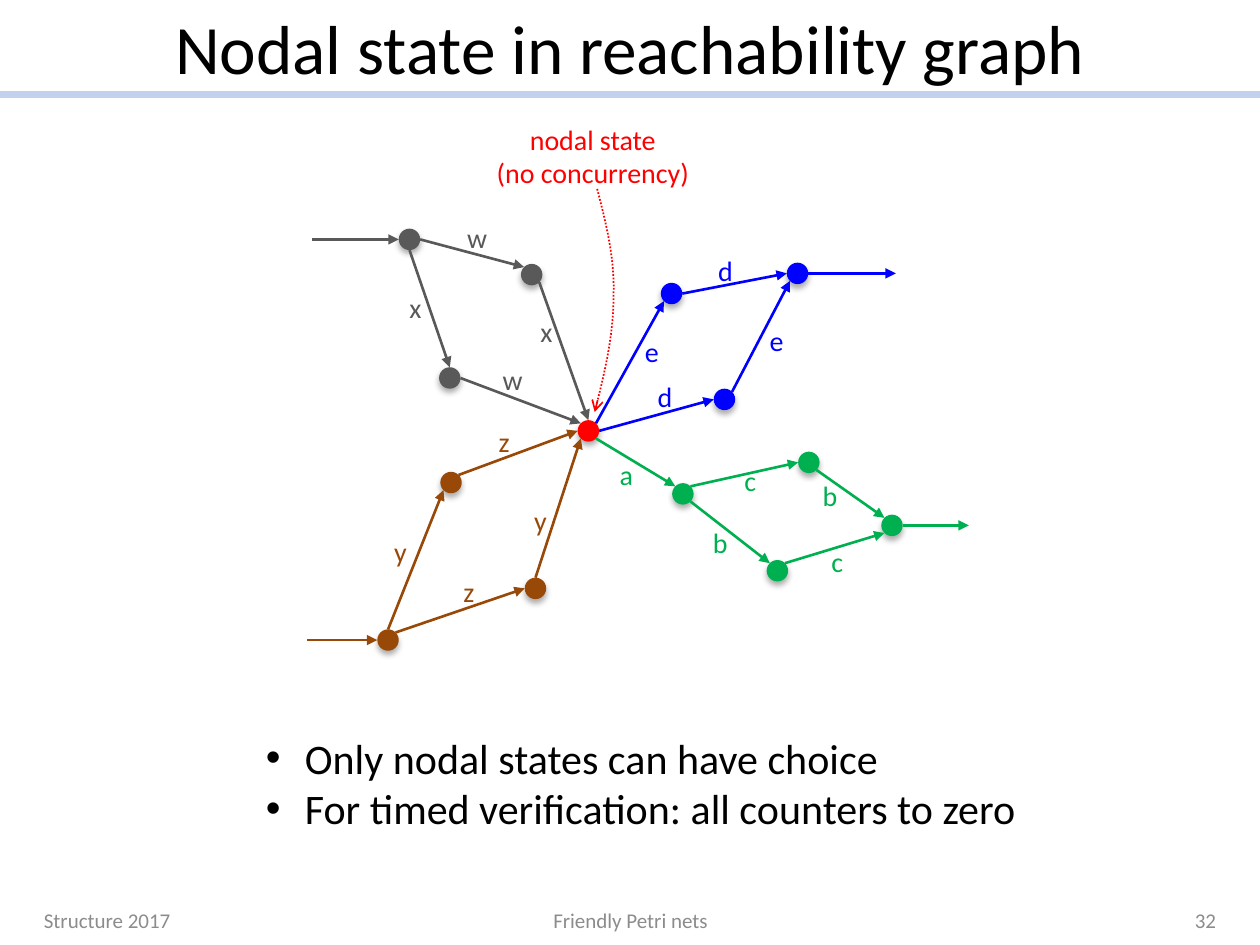
import math
from dataclasses import dataclass

import pptx
import pptx.dml.color
import pptx.enum.dml
import pptx.enum.shapes
import pptx.enum.text
import pptx.oxml
import pptx.oxml.ns
import pptx.util

Inches = pptx.util.Inches
Pt = pptx.util.Pt
RGB = pptx.dml.color.RGBColor.from_string
ALIGN = pptx.enum.text.PP_ALIGN
ANCHOR = pptx.enum.text.MSO_ANCHOR
AUTO_SIZE = pptx.enum.text.MSO_AUTO_SIZE
qn = pptx.oxml.ns.qn


@dataclass(frozen=True)
class Theme:
    font: str = "Calibri"
    black: str = "000000"
    rule: str = "C2D1ED"
    footer: str = "8C8C8C"
    red: str = "FF0000"
    brown: str = "984807"
    grey: str = "595959"
    blue: str = "0000FF"
    green: str = "00B050"
    title_size: float = 39.6
    list_size: float = 24
    label_size: float = 16
    footer_size: float = 12


THEME = Theme()
NODE_SIZE = 0.17
LABEL_WIDTHS = {"w": 0.36, "x": 0.3, "y": 0.3, "z": 0.29, "a": 0.31,
                "b": 0.32, "c": 0.3, "d": 0.32, "e": 0.31}
SIDES = {"right": 0, "bottom right": 45, "bottom": 90, "bottom left": 135,
         "left": 180, "top left": 225, "top": 270, "top right": 315}

NODES = {
    "hub": (4.67, 3.42, THEME.red),
    "brown in": (3.08, 5.08, THEME.brown),
    "brown z": (4.25, 4.67, THEME.brown),
    "brown y": (3.58, 3.83, THEME.brown),
    "grey in": (3.25, 1.9, THEME.grey),
    "grey w": (4.22, 2.18, THEME.grey),
    "grey x": (3.57, 3, THEME.grey),
    "blue e": (5.33, 2.33, THEME.blue),
    "blue d": (5.75, 3.17, THEME.blue),
    "blue out": (6.33, 2.17, THEME.blue),
    "green a": (5.42, 3.92, THEME.green),
    "green b": (6.17, 4.53, THEME.green),
    "green c": (6.42, 3.67, THEME.green),
    "green out": (7.08, 4.17, THEME.green),
}

EDGES = [
    ("brown y", "top right", "hub", "left", "z", 3.86, 3.32),
    ("brown z", "top", "hub", "bottom left", "y", 4.14, 3.95),
    ("brown in", "top", "brown y", "bottom left", "y", 3.03, 4.19),
    ("brown in", "top right", "brown z", "left", "z", 3.58, 4.51),
    ("grey in", "right", "grey w", "top left", "w", 3.61, 1.7),
    ("grey w", "bottom right", "hub", "top", "x", 4.19, 2.45),
    ("grey in", "bottom", "grey x", "top", "x", 3.15, 2.26),
    ("grey x", "right", "hub", "top left", "w", 3.89, 2.83),
    ("blue e", "right", "blue out", "left", "d", 5.6, 1.96),
    ("blue d", "top right", "blue out", "bottom left", "e", 6.01, 2.52),
    ("hub", "right", "blue d", "left", "d", 5.12, 2.96),
    ("hub", "top right", "blue e", "bottom left", "e", 5.02, 2.61),
    ("hub", "bottom right", "green a", "top left", "a", 4.82, 3.58),
    ("green a", "top right", "green c", "left", "c", 5.81, 3.63),
    ("green b", "top right", "green out", "bottom left", "c", 6.5, 4.27),
    ("green a", "bottom right", "green b", "top left", "b", 5.56, 4.12),
    ("green c", "bottom right", "green out", "top left", "b", 6.43, 3.75),
]

ENTRIES = [("grey in", 2.48), ("brown in", 2.44)]
EXITS = [("blue out", 7.11), ("green out", 7.69)]
POINTER = [(4.74, 1.5), (4.81, 1.77), (4.88, 2.05), (4.87, 2.34),
           (4.87, 2.64), (4.8, 2.96), (4.72, 3.27)]
FOOTERS = [("Structure 2017", 0.25, 2.33, ALIGN.LEFT),
           ("Friendly Petri nets", 3.42, 3.17, ALIGN.CENTER),
           ("32", 7.42, 2.33, ALIGN.RIGHT)]


def add_xml(parent, tag, **attrs):
    child = pptx.oxml.parse_xml(
        f'<a:{tag} xmlns:a="http://schemas.openxmlformats.org/drawingml/2006/main"/>')
    for name, value in attrs.items():
        child.set(name, str(value))
    parent.append(child)
    return child


def place(sp, left, top, width, height):
    sp.left, sp.top = Inches(left), Inches(top)
    sp.width, sp.height = Inches(width), Inches(height)


def format_text(tf, size, color, align):
    for p in tf.paragraphs:
        p.alignment = align
        for r in p.runs:
            r.font.name, r.font.size = THEME.font, Pt(size)
            r.font.color.rgb = RGB(color)


def add_text(s, text, box, size, color, align=ALIGN.LEFT, fit=True):
    tf = s.shapes.add_textbox(*map(Inches, box)).text_frame
    tf.text = text
    tf.word_wrap = not fit
    tf.auto_size = AUTO_SIZE.SHAPE_TO_FIT_TEXT if fit else AUTO_SIZE.NONE
    tf.vertical_anchor = ANCHOR.TOP if fit else ANCHOR.MIDDLE
    format_text(tf, size, color, align)


def add_line(s, start, end, color, width=1.5, arrow=True):
    sp = s.shapes.add_connector(pptx.enum.shapes.MSO_CONNECTOR.STRAIGHT,
                                *map(Inches, (*start, *end)))
    sp.line.color.rgb, sp.line.width = RGB(color), Pt(width)
    if arrow:
        add_xml(sp.line._get_or_add_ln(), "tailEnd", type="triangle")
    add_xml(sp._element.spPr, "effectLst")


def add_node(s, x, y, color):
    half = NODE_SIZE / 2
    sp = s.shapes.add_shape(pptx.enum.shapes.MSO_SHAPE.OVAL,
                            *map(Inches, (x - half, y - half, NODE_SIZE, NODE_SIZE)))
    sp.fill.solid()
    sp.fill.fore_color.rgb = RGB(color)
    sp.line.fill.background()
    sp.shadow.inherit = False
    effects = sp._element.spPr.find(qn("a:effectLst"))
    shadow = add_xml(effects, "outerShdw", blurRad=Pt(3.5), dist=Pt(2.2),
                     dir=90 * 60000, rotWithShape=0)
    add_xml(add_xml(shadow, "srgbClr", val=THEME.black), "alpha", val=32000)


def node_side(node, side):
    x, y, _ = NODES[node]
    angle = math.radians(SIDES[side])
    return (x + NODE_SIZE / 2 * math.cos(angle), y + NODE_SIZE / 2 * math.sin(angle))


def add_curve(s, points, color):
    start, *rest = [(Inches(x), Inches(y)) for x, y in points]
    builder = s.shapes.build_freeform(*start)
    builder.add_line_segments(rest, close=False)
    sp = builder.convert_to_shape()
    sp.fill.background()
    sp.line.color.rgb, sp.line.width = RGB(color), Pt(1)
    sp.line.dash_style = pptx.enum.dml.MSO_LINE.ROUND_DOT
    add_xml(sp.line._get_or_add_ln(), "tailEnd", type="arrow")
    sp.shadow.inherit = False
    segments = list(sp._element.iter(qn("a:lnTo")))
    outline = segments[0].getparent()
    for i in range(0, len(segments), 3):
        bezier = add_xml(outline, "cubicBezTo")
        for segment in segments[i:i + 3]:
            bezier.append(segment[0])
            outline.remove(segment)


def add_title(s, text):
    add_line(s, (0, 0.75), (10, 0.75), THEME.rule, 4, arrow=False)
    sp = s.shapes.title
    place(sp, 0.5, 0, 9, 0.75)
    tf = sp.text_frame
    tf.text = text
    tf.auto_size, tf.vertical_anchor = AUTO_SIZE.NONE, ANCHOR.MIDDLE
    format_text(tf, THEME.title_size, THEME.black, ALIGN.CENTER)


def add_list(s, items):
    sp = s.placeholders[1]
    place(sp, 2.01, 5.76, 6.21, 0.91)
    tf = sp.text_frame
    tf.text = "\n".join(items)
    tf.word_wrap, tf.auto_size = False, AUTO_SIZE.SHAPE_TO_FIT_TEXT
    format_text(tf, THEME.list_size, THEME.black, ALIGN.LEFT)
    for p in tf.paragraphs:
        p.space_before = Pt(0)
        pPr = p._p.get_or_add_pPr()
        pPr.set("marL", str(Inches(0.31)))
        pPr.set("indent", str(-Inches(0.31)))
        add_xml(pPr, "buChar", char="•")


def add_graph(s):
    for node in NODES.values():
        add_node(s, *node)
    for start, start_side, end, end_side, label, left, top in EDGES:
        color = NODES[end if start == "hub" else start][2]
        add_line(s, node_side(start, start_side), node_side(end, end_side), color)
        add_text(s, label, (left, top, LABEL_WIDTHS[label], 0.37), THEME.label_size, color)
    for node, x in ENTRIES:
        add_line(s, (x, NODES[node][1]), node_side(node, "left"), NODES[node][2])
    for node, x in EXITS:
        add_line(s, node_side(node, "right"), (x, NODES[node][1]), NODES[node][2])


def main():
    prs = pptx.Presentation()
    prs.slide_width, prs.slide_height = Inches(10), Inches(7.5)
    s = prs.slides.add_slide(prs.slide_layouts[1])
    add_title(s, "Nodal state in reachability graph")
    add_graph(s)
    add_text(s, "nodal state\v(no concurrency)", (3.83, 0.92, 1.75, 0.64),
             THEME.label_size, THEME.red, ALIGN.CENTER)
    add_curve(s, POINTER, THEME.red)
    add_list(s, ["Only nodal states can have choice",
                 "For timed verification: all counters to zero"])
    for text, left, width, align in FOOTERS:
        add_text(s, text, (left, 7.1, width, 0.4), THEME.footer_size,
                 THEME.footer, align, fit=False)
    prs.save("out.pptx")


if __name__ == "__main__":
    main()
